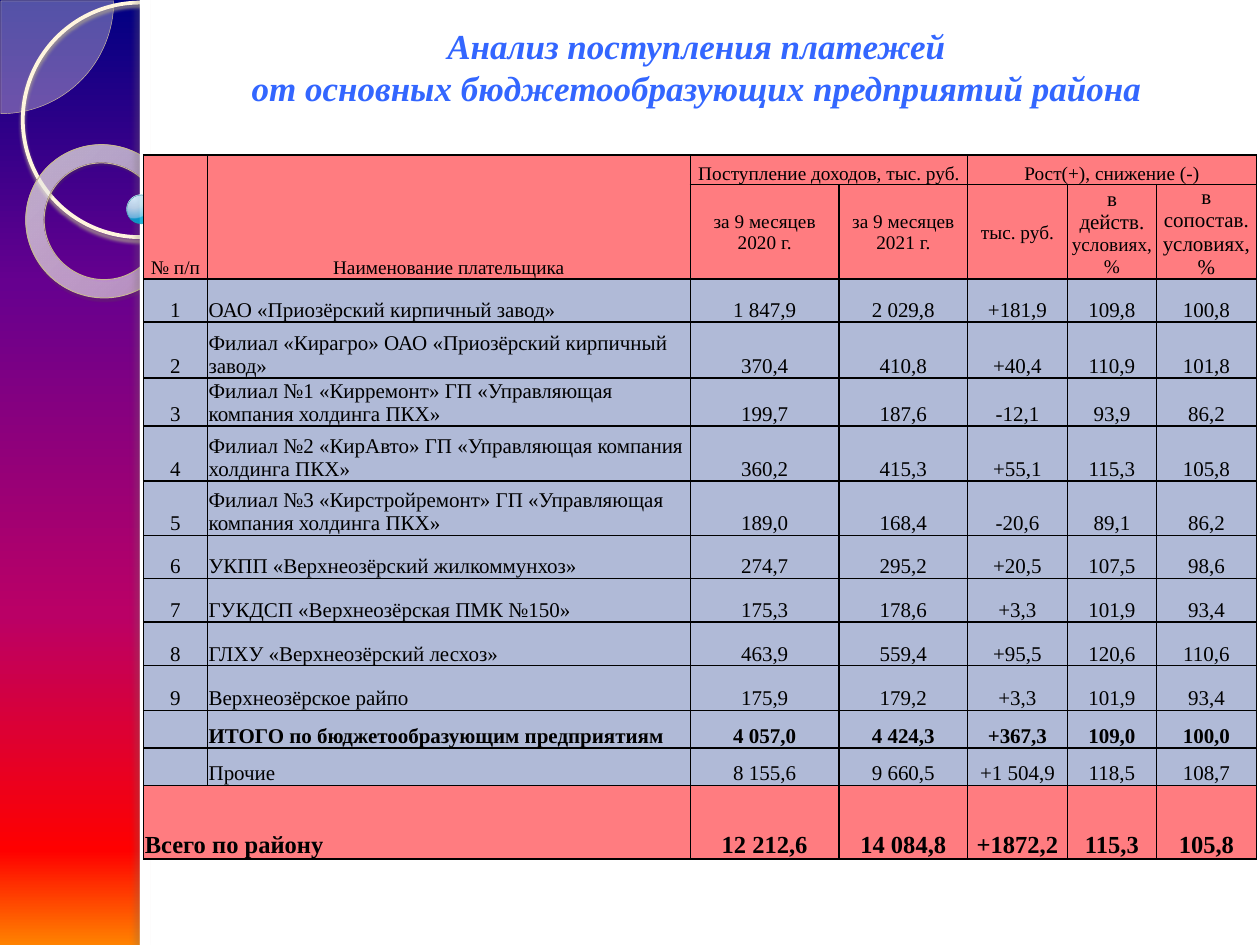
from dataclasses import dataclass
from typing import Optional

from lxml import etree
from pptx import Presentation
from pptx.dml.color import RGBColor
from pptx.enum.shapes import MSO_SHAPE
from pptx.enum.text import MSO_ANCHOR, PP_ALIGN
from pptx.oxml.ns import qn
from pptx.util import Pt

PIE, OVAL, DONUT, RECT = MSO_SHAPE.PIE, MSO_SHAPE.OVAL, MSO_SHAPE.DONUT, MSO_SHAPE.RECTANGLE
CENTER, LEFT = PP_ALIGN.CENTER, PP_ALIGN.LEFT
BOTTOM, MIDDLE = MSO_ANCHOR.BOTTOM, MSO_ANCHOR.MIDDLE

FONT = "Times New Roman"
BLACK = RGBColor(0x00, 0x00, 0x00)
WHITE = RGBColor(0xFF, 0xFF, 0xFF)
TITLE_BLUE = RGBColor(0x33, 0x66, 0xFF)
CORAL = RGBColor(0xFF, 0x7C, 0x80)
STEEL = RGBColor(0xB0, 0xBA, 0xD7)
CREAM = RGBColor(0xFE, 0xFA, 0xF4)
SAND = RGBColor(0xD3, 0xC3, 0x9F)
IVORY = RGBColor(0xFF, 0xF5, 0xDE)
KHAKI = RGBColor(0xC7, 0xB8, 0x93)
TEAL = RGBColor(0x30, 0x8E, 0xA5)
RING_SHADE = RGBColor(0xB0, 0xA6, 0x8F)
DONUT_SHADE = RGBColor(0x5A, 0x54, 0x44)
EDGE_SHADE = RGBColor(0x73, 0x6F, 0x63)


@dataclass(frozen=True)
class Stop:
    position: int
    color: RGBColor
    alpha: int = 100


@dataclass(frozen=True)
class Shadow:
    color: RGBColor
    alpha: int
    blur: float
    distance: float
    angle: int


@dataclass(frozen=True)
class Ornament:
    preset: int
    box: tuple[float, float, float, float]
    fill: Optional[RGBColor] = None
    alpha: int = 100
    stops: tuple[Stop, ...] = ()
    focus: tuple[int, ...] = ()
    line: Optional[RGBColor] = None
    weight: float = 0
    shadow: Optional[Shadow] = None
    adjustments: tuple[float, ...] = ()
    rotation: float = 0


@dataclass(frozen=True)
class CellStyle:
    fill: RGBColor
    size: float = 12
    bold: bool = False
    anchor: int = BOTTOM
    align: int = CENTER


SKY = (Stop(0, RGBColor(0x00, 0x00, 0x82)), Stop(30, RGBColor(0x66, 0x00, 0x8F)),
       Stop(65, RGBColor(0xBA, 0x00, 0x66)), Stop(90, RGBColor(0xFF, 0x00, 0x00)),
       Stop(100, RGBColor(0xFF, 0x82, 0x00)))
DONUT_STOPS = (Stop(0, RGBColor(0xFF, 0xFC, 0xF6), 70), Stop(70, RGBColor(0xFF, 0xFE, 0xFB), 55),
               Stop(100, RGBColor(0xF0, 0xD2, 0x8E), 60))
BALL_STOPS = (Stop(0, RGBColor(0xDA, 0xF4, 0xFF), 95), Stop(50, RGBColor(0xC3, 0xE3, 0xF0), 90),
              Stop(95, RGBColor(0x6B, 0xC7, 0xE8), 88), Stop(100, RGBColor(0x00, 0xAB, 0xD5), 85))

ORNAMENTS = (
    Ornament(PIE, (-64, -64, 129, 129), fill=CREAM, alpha=33, line=SAND, weight=0.25,
             adjustments=(0, 54)),
    Ornament(OVAL, (13, 1.5, 134, 134), line=IVORY, weight=2.15,
             shadow=Shadow(RING_SHADE, 85, 2, 2, 90)),
    Ornament(DONUT, (14.5, 83, 88.5, 87), stops=DONUT_STOPS, focus=(-408, -50, 508, 150),
             line=KHAKI, weight=0.58, shadow=Shadow(DONUT_SHADE, 35, 1, 1.2, 75),
             adjustments=(0.12,), rotation=38.6),
    Ornament(RECT, (80, 0, 640, 540), fill=WHITE),
    Ornament(RECT, (80, 0, 6, 540), fill=WHITE, shadow=Shadow(EDGE_SHADE, 25, 3, 3, 180)),
    Ornament(OVAL, (72.5, 111.5, 16.5, 16.5), stops=BALL_STOPS, focus=(25, 12, 75, 88),
             line=TEAL, weight=0.16),
)

COLUMN_WIDTHS = (36.5, 276, 85, 73.5, 57, 51, 57)
ROW_HEIGHTS = (17, 54, 24.5, 32, 27.5, 31.5, 31, 24.5, 25, 25, 25.5, 21.5, 21.5, 42)
MERGES = ((0, 0, 1, 0), (0, 1, 1, 1), (0, 2, 0, 3), (0, 4, 0, 6), (13, 0, 13, 1))
ROWS = (
    ("№ п/п", "Наименование плательщика", "Поступление доходов, тыс. руб.", "",
     "Рост(+), снижение (-)", "", ""),
    ("", "", "за 9 месяцев\n2020 г.", "за 9 месяцев\n2021 г.", "тыс. руб.",
     "в\vдейств.\vусловиях,\v%", "в\vсопостав.\vусловиях,\v%"),
    ("1", "ОАО «Приозёрский кирпичный завод»",
     "1 847,9", "2 029,8", "+181,9", "109,8", "100,8"),
    ("2", "Филиал «Кирагро» ОАО «Приозёрский кирпичный завод»",
     "370,4", "410,8", "+40,4", "110,9", "101,8"),
    ("3", "Филиал №1 «Кирремонт» ГП «Управляющая компания холдинга ПКХ»",
     "199,7", "187,6", "-12,1", "93,9", "86,2"),
    ("4", "Филиал №2 «КирАвто» ГП «Управляющая компания холдинга ПКХ»",
     "360,2", "415,3", "+55,1", "115,3", "105,8"),
    ("5", "Филиал №3 «Кирстройремонт» ГП «Управляющая компания холдинга ПКХ»",
     "189,0", "168,4", "-20,6", "89,1", "86,2"),
    ("6", "УКПП «Верхнеозёрский жилкоммунхоз»",
     "274,7", "295,2", "+20,5", "107,5", "98,6"),
    ("7", "ГУКДСП «Верхнеозёрская ПМК №150»", "175,3", "178,6", "+3,3", "101,9", "93,4"),
    ("8", "ГЛХУ «Верхнеозёрский лесхоз»", "463,9", "559,4", "+95,5", "120,6", "110,6"),
    ("9", "Верхнеозёрское райпо", "175,9", "179,2", "+3,3", "101,9", "93,4"),
    ("", "ИТОГО по бюджетообразующим предприятиям",
     "4 057,0", "4 424,3", "+367,3", "109,0", "100,0"),
    ("", "Прочие", "8 155,6", "9 660,5", "+1 504,9", "118,5", "108,7"),
    ("Всего по району", "", "12 212,6", "14 084,8", "+1872,2", "115,3", "105,8"),
)
HEADER_ROWS, SUBTOTAL_ROW, TOTAL_ROW = 2, 11, 13


def apply(target, values: dict) -> None:
    for name, value in values.items():
        setattr(target, name, value)


def add_color(parent, color: RGBColor, alpha: int) -> None:
    node = etree.SubElement(parent, qn("a:srgbClr"), val=str(color))
    if alpha < 100:
        etree.SubElement(node, qn("a:alpha"), val=str(alpha * 1000))


def paint_gradient(fill, owner, stops: tuple[Stop, ...], focus: tuple[int, ...] = ()) -> None:
    fill.gradient()
    gradient = owner.find(qn("a:gradFill"))
    for child in list(gradient):
        gradient.remove(child)
    stop_list = etree.SubElement(gradient, qn("a:gsLst"))
    for stop in stops:
        add_color(etree.SubElement(stop_list, qn("a:gs"), pos=str(stop.position * 1000)),
                  stop.color, stop.alpha)
    if focus:
        radial = etree.SubElement(gradient, qn("a:path"), path="circle")
        sides = {side: str(value * 1000) for side, value in zip("ltrb", focus)}
        etree.SubElement(radial, qn("a:fillToRect"), sides)
    else:
        etree.SubElement(gradient, qn("a:lin"), ang="5400000", scaled="0")


def draw_ornament(slide, item: Ornament) -> None:
    shape = slide.shapes.add_shape(item.preset, *map(Pt, item.box))
    shape.rotation = item.rotation
    for index, value in enumerate(item.adjustments):
        shape.adjustments[index] = value
    shape.shadow.inherit = False
    properties = shape.element.spPr
    if item.stops:
        paint_gradient(shape.fill, properties, item.stops, item.focus)
    elif item.fill is not None:
        shape.fill.solid()
        shape.fill.fore_color.rgb = item.fill
        if item.alpha < 100:
            tint = properties.find(qn("a:solidFill")).find(qn("a:srgbClr"))
            etree.SubElement(tint, qn("a:alpha"), val=str(item.alpha * 1000))
    else:
        shape.fill.background()
    if item.line is not None:
        shape.line.color.rgb = item.line
        shape.line.width = Pt(item.weight)
    else:
        shape.line.fill.background()
    if item.shadow:
        cast = etree.SubElement(properties.find(qn("a:effectLst")), qn("a:outerShdw"),
                                blurRad=str(Pt(item.shadow.blur)),
                                dist=str(Pt(item.shadow.distance)),
                                dir=str(item.shadow.angle * 60000), rotWithShape="0")
        add_color(cast, item.shadow.color, item.shadow.alpha)


def style_for(row: int, column: int) -> CellStyle:
    if row < HEADER_ROWS:
        large = row == 1 and column == 6
        return CellStyle(CORAL, 12 if large else 11, anchor=MIDDLE if row else BOTTOM)
    if row == TOTAL_ROW:
        return CellStyle(CORAL, 14, True, align=CENTER if column else LEFT)
    return CellStyle(STEEL, bold=row == SUBTOTAL_ROW, align=LEFT if column == 1 else CENTER)


def fill_cell(cell, text: str, style: CellStyle) -> None:
    apply(cell, {"margin_left": Pt(0.75), "margin_right": Pt(0.75), "margin_top": Pt(0.75),
                 "margin_bottom": 0, "vertical_anchor": style.anchor})
    properties = cell._tc.get_or_add_tcPr()
    for side in ("lnL", "lnR", "lnT", "lnB"):
        border = etree.SubElement(properties, qn(f"a:{side}"), w=str(Pt(1)))
        add_color(etree.SubElement(border, qn("a:solidFill")), BLACK, 100)
    cell.fill.solid()
    cell.fill.fore_color.rgb = style.fill
    cell.text_frame.text = text
    for paragraph in cell.text_frame.paragraphs:
        paragraph.alignment = style.align
        for run in paragraph.runs:
            apply(run.font, {"name": FONT, "size": Pt(style.size), "bold": style.bold})
            run.font.color.rgb = BLACK
        if not paragraph.runs:
            etree.SubElement(paragraph._p, qn("a:endParaRPr"), sz=str(int(style.size * 100)))


def draw_payments(slide) -> None:
    frame = slide.shapes.add_table(len(ROWS), len(COLUMN_WIDTHS), Pt(82), Pt(88.5),
                                   Pt(sum(COLUMN_WIDTHS)), Pt(sum(ROW_HEIGHTS)))
    payments = frame.table
    apply(payments, {"first_row": False, "horz_banding": False})
    for column, width in zip(payments.columns, COLUMN_WIDTHS):
        column.width = Pt(width)
    for row, height in zip(payments.rows, ROW_HEIGHTS):
        row.height = Pt(height)
    for r, texts in enumerate(ROWS):
        for c, text in enumerate(texts):
            fill_cell(payments.cell(r, c), text, style_for(r, c))
    for run in payments.cell(1, 5).text_frame.paragraphs[0].runs[:2]:
        run.font.size = Pt(12)
    for top, left, bottom, right in MERGES:
        payments.cell(top, left).merge(payments.cell(bottom, right))


def draw_title(slide) -> None:
    title = slide.shapes.title
    slide.shapes.element.append(title.element)
    apply(title, {"left": Pt(76), "top": Pt(9.5), "width": Pt(644), "height": Pt(57)})
    title.text_frame.text = ("Анализ поступления платежей\v"
                             "от основных бюджетообразующих предприятий района")
    title.text_frame.vertical_anchor = MIDDLE
    heading = title.text_frame.paragraphs[0]
    heading.alignment = CENTER
    for run in heading.runs:
        apply(run.font, {"name": FONT, "size": Pt(20), "bold": True, "italic": True})
        run.font.color.rgb = TITLE_BLUE


def main() -> None:
    deck = Presentation()
    apply(deck, {"slide_width": Pt(720), "slide_height": Pt(540)})
    slide = deck.slides.add_slide(deck.slide_layouts[5])
    backdrop = slide.background.fill
    backdrop.solid()
    paint_gradient(backdrop, slide.element.find(f".//{qn('p:bgPr')}"), SKY)
    for item in ORNAMENTS:
        draw_ornament(slide, item)
    draw_title(slide)
    draw_payments(slide)
    deck.save("out.pptx")


if __name__ == "__main__":
    main()
